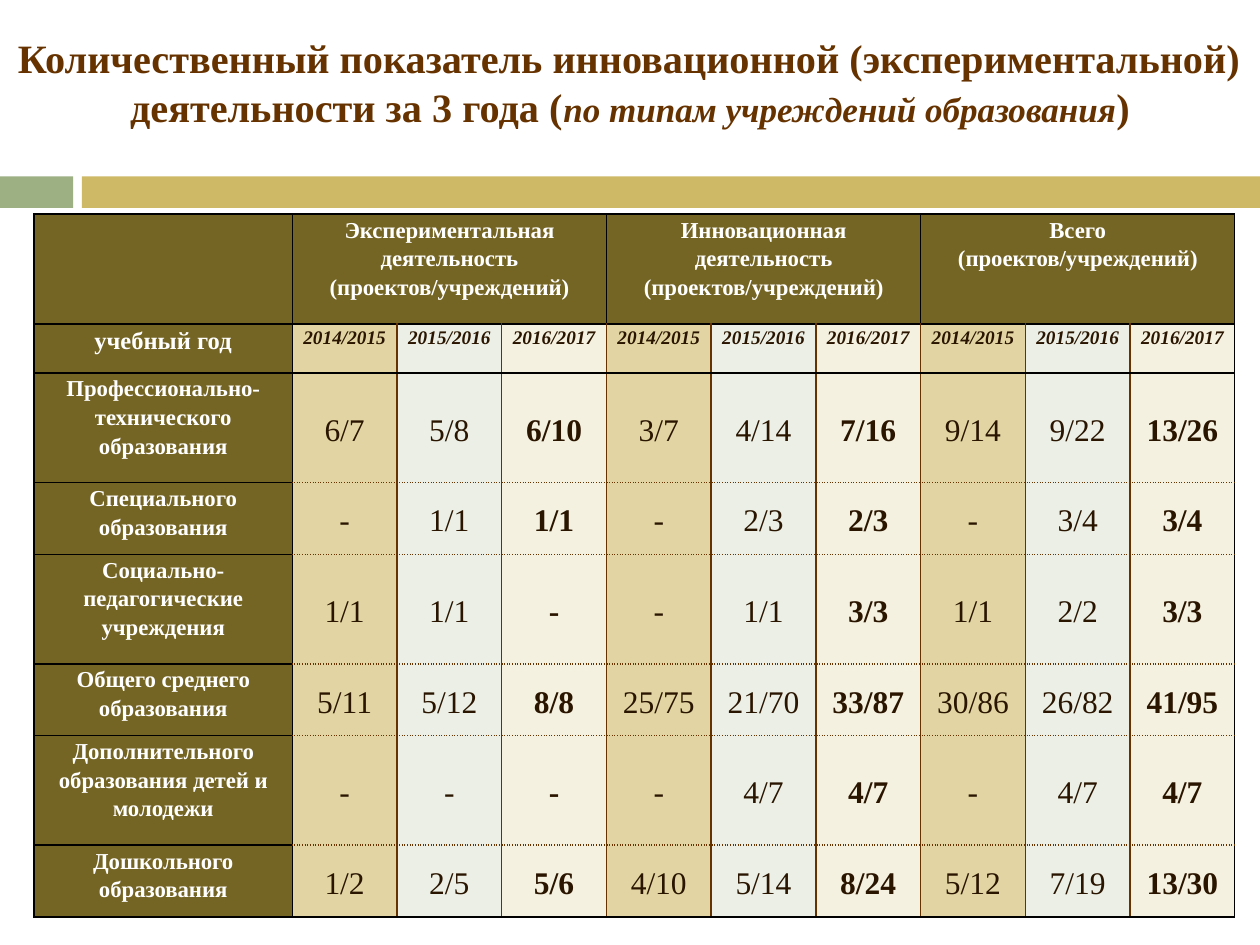
import pptx
import pptx.dml.color
import pptx.enum.shapes
import pptx.enum.text
import pptx.oxml
import pptx.oxml.ns
import pptx.util
from pptx.util import Inches

FONT = "Times New Roman"
BLACK, BROWN, DARK, WHITE, OLIVE = "000000", "663300", "2A1500", "FFFFFF", "756525"
FILLS = ["E2D5A3", "EBEFE6", "F5F1E0"]
YEARS = ["2014/2015", "2015/2016", "2016/2017"]
UNIT = "(проектов/учреждений)"
GROUPS = ["Экспериментальная деятельность", "Инновационная деятельность", "Всего"]
ROWS = [
    ("Профессионально-технического образования", "6/7 5/8 6/10 3/7 4/14 7/16 9/14 9/22 13/26"),
    ("Специального образования", "- 1/1 1/1 - 2/3 2/3 - 3/4 3/4"),
    ("Социально-педагогические учреждения", "1/1 1/1 - - 1/1 3/3 1/1 2/2 3/3"),
    ("Общего среднего образования", "5/11 5/12 8/8 25/75 21/70 33/87 30/86 26/82 41/95"),
    ("Дополнительного образования детей и молодежи", "- - - - 4/7 4/7 - 4/7 4/7"),
    ("Дошкольного образования", "1/2 2/5 5/6 4/10 5/14 8/24 5/12 7/19 13/30"),
]
HIGHS = [0.87, 0.39] + [0.87, 0.57] * 3
HEAD, WIDE = 2.05, 9.53


def rgb(code):
    """Return the colour for a hex string."""
    return pptx.dml.color.RGBColor.from_string(code)


def style(run, size, color, bold=True, slant=False):
    """Format one run."""
    font = run.font
    font.name, font.size, font.bold, font.italic = FONT, pptx.util.Pt(size), bold, slant
    font.color.rgb = rgb(color)


def add_band(slide, left, width, color):
    """Add one part of the bar under the title."""
    kind = pptx.enum.shapes.MSO_SHAPE.RECTANGLE
    band = slide.shapes.add_shape(kind, Inches(left), Inches(1.4), Inches(width), Inches(0.25))
    band.shadow.inherit = False
    band.fill.solid()
    band.fill.fore_color.rgb = rgb(color)
    band.line.fill.background()


def set_title(slide):
    """Place the title and fill it with its runs."""
    title = slide.shapes.title
    title.left, title.top = Inches(0), Inches(0.21)
    title.width, title.height = Inches(10), Inches(0.88)
    frame = title.text_frame
    frame.word_wrap = True
    frame.auto_size = pptx.enum.text.MSO_AUTO_SIZE.NONE
    frame.vertical_anchor = pptx.enum.text.MSO_ANCHOR.MIDDLE
    para = frame.paragraphs[0]
    para.alignment = pptx.enum.text.PP_ALIGN.CENTER
    parts = [
        ("Количественный показатель инновационной (экспериментальной) деятельности за 3 года (", 23, False),
        ("по типам учреждений образования", 20, True),
        (")", 23, False),
    ]
    for text, size, slant in parts:
        run = para.add_run()
        run.text = text
        style(run, size, BROWN, slant=slant)


def set_edges(cell, row, col):
    """Draw the four borders that suit the cell's place in the grid."""
    head = row == 0 or col == 0
    last = len(HIGHS) - 1
    dark = {
        "L": head or col == 1,
        "R": head or col == 9,
        "T": head or row <= 2,
        "B": head or row in (1, last),
    }
    for side, black in dark.items():
        dash = "solid" if black or side in "LR" else "sysDot"
        cell._tc.get_or_add_tcPr().append(pptx.oxml.parse_xml(
            f'<a:ln{side} {pptx.oxml.ns.nsdecls("a")} w="12700"><a:solidFill>'
            f'<a:srgbClr val="{BLACK if black else BROWN}"/></a:solidFill>'
            f'<a:prstDash val="{dash}"/></a:ln{side}>'))


def set_cell(cell, text, size, color, bold=True, slant=False, middle=False):
    """Write and format the text of one cell."""
    anchor = pptx.enum.text.MSO_ANCHOR
    cell.vertical_anchor = anchor.MIDDLE if middle else anchor.TOP
    cell.margin_left = cell.margin_right = Inches(0.07 if middle else 0.06)
    cell.margin_top = cell.margin_bottom = 0
    cell.text_frame.text = text
    for para in cell.text_frame.paragraphs:
        para.alignment = pptx.enum.text.PP_ALIGN.CENTER
        para.line_spacing = 1.15
        for run in para.runs:
            style(run, size, color, bold, slant)


def add_grid(slide):
    """Add the table with its sizes, borders and fills."""
    frame = slide.shapes.add_table(
        len(HIGHS), 10, Inches(0.27), Inches(1.7), Inches(WIDE), Inches(sum(HIGHS)))
    table = frame.table
    for col, column in enumerate(table.columns):
        column.width = Inches((WIDE - HEAD) / 9 if col else HEAD)
    for row, high in enumerate(HIGHS):
        table.rows[row].height = Inches(high)
        for col in range(10):
            cell = table.cell(row, col)
            set_edges(cell, row, col)
            cell.fill.solid()
            cell.fill.fore_color.rgb = rgb(FILLS[(col - 1) % 3] if row and col else OLIVE)
    return table


def fill_grid(table):
    """Write the headings and the values."""
    for num, group in enumerate(GROUPS):
        col = 1 + 3 * num
        table.cell(0, col).merge(table.cell(0, col + 2))
        set_cell(table.cell(0, col), f"{group}\n{UNIT}", 13, WHITE)
    set_cell(table.cell(1, 0), "учебный год", 14, WHITE)
    for col, year in enumerate(YEARS * 3, 1):
        set_cell(table.cell(1, col), year, 11, DARK, slant=True)
    for row, (name, values) in enumerate(ROWS, 2):
        set_cell(table.cell(row, 0), name, 13, WHITE)
        for col, value in enumerate(values.split(), 1):
            set_cell(table.cell(row, col), value, 18, DARK, bold=col % 3 == 0, middle=True)


def main():
    """Build and save the slide."""
    deck = pptx.Presentation()
    deck.slide_width, deck.slide_height = Inches(10), Inches(7.5)
    slide = deck.slides.add_slide(deck.slide_layouts[5])
    add_band(slide, 0, 0.58, "9CB084")
    add_band(slide, 0.65, 9.35, "CEB966")
    set_title(slide)
    fill_grid(add_grid(slide))
    deck.save("out.pptx")


if __name__ == "__main__":
    main()
